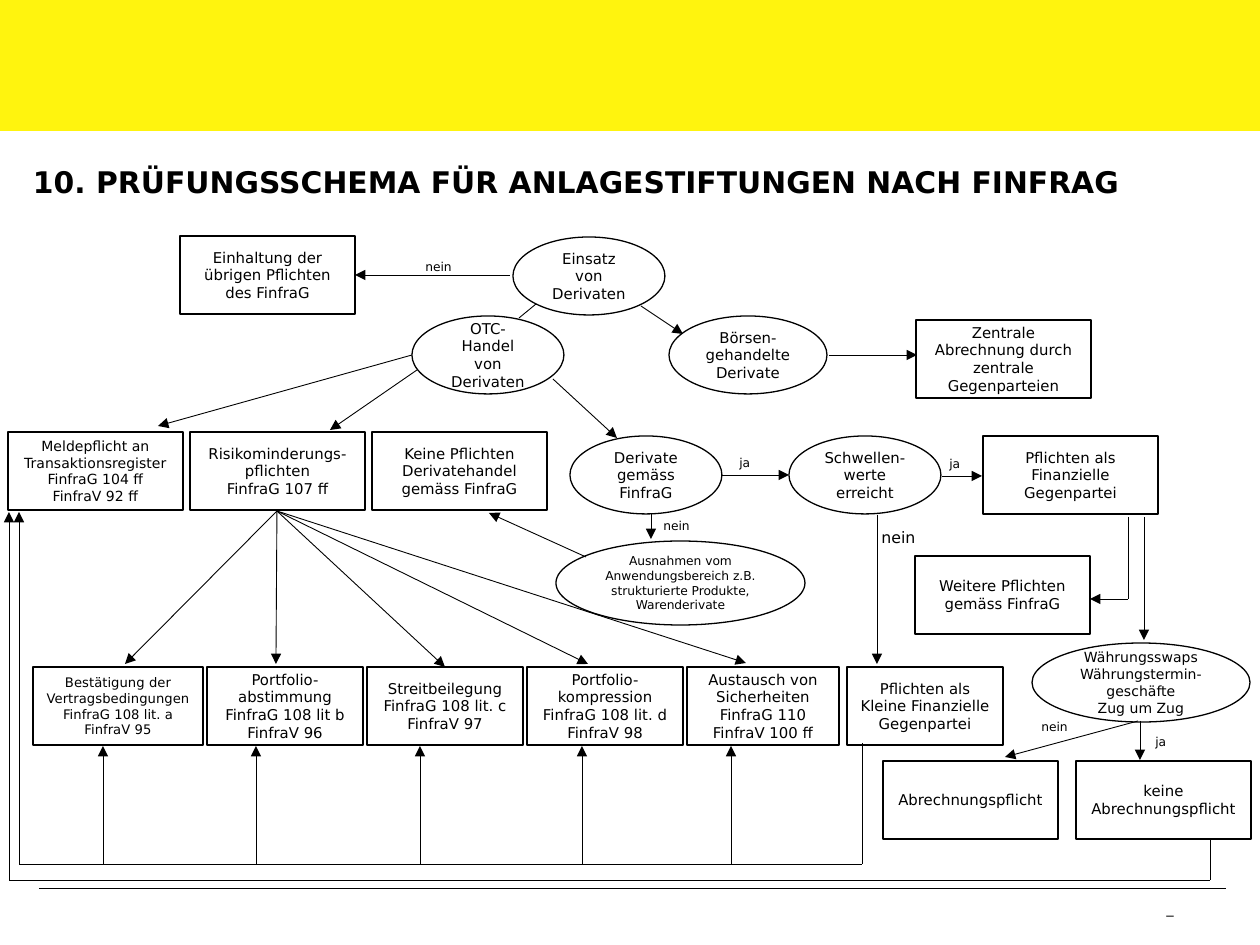
from lxml.etree import SubElement
from pptx import Presentation
from pptx.dml.color import RGBColor
from pptx.enum.shapes import MSO_CONNECTOR as CONN, MSO_SHAPE as SHAPE
from pptx.enum.text import MSO_ANCHOR as ANCHOR, PP_ALIGN as ALIGN
from pptx.oxml.ns import qn
from pptx.util import Emu, Pt

YELLOW = RGBColor(0xFF, 0xF4, 0x0E)
BLACK = RGBColor(0, 0, 0)
WHITE = RGBColor(0xFF, 0xFF, 0xFF)
FONT = "DejaVu Sans"
RECT, OVAL = SHAPE.RECTANGLE, SHAPE.OVAL
RECT_W, OVAL_W, NODE_H = 175, 152, 78


def px(n):
    """Turn slide pixels into EMU."""
    return Emu(round(n * 914400 / 126))


def write(tf, text, size, align=ALIGN.LEFT, bold=False):
    """Fill a text frame and format every run."""
    tf.text = text
    for p in tf.paragraphs:
        p.alignment = align
        for r in p.runs:
            r.font.name, r.font.size, r.font.bold = FONT, Pt(size), bold
            r.font.color.rgb = BLACK


def node(slide, box, kind, x, y, text, w=None, h=NODE_H, size=8.5):
    """Place an outlined node with centred text inside a region."""
    w = w or (RECT_W if kind == RECT else OVAL_W)
    sp = slide.shapes.add_shape(kind, px(box[0] + x), px(box[1] + y), px(w), px(h))
    sp.shadow.inherit = False
    sp.fill.solid()
    sp.fill.fore_color.rgb = WHITE
    sp.line.color.rgb = BLACK
    sp.line.width = Pt(0.75)
    sp.text_frame.word_wrap = True
    sp.text_frame.vertical_anchor = ANCHOR.MIDDLE
    write(sp.text_frame, text, size, ALIGN.CENTER)


def line(slide, box, x1, y1, x2, y2, arrow=True):
    """Draw a thin line, with an arrowhead at its end if wanted."""
    x, y = box[:2]
    cx = slide.shapes.add_connector(CONN.STRAIGHT, px(x + x1), px(y + y1), px(x + x2), px(y + y2))
    cx.line.color.rgb = BLACK
    cx.line.width = Pt(0.5)
    if arrow:
        SubElement(cx.line._get_or_add_ln(), qn("a:tailEnd"), type="triangle")
    SubElement(cx._element.spPr, qn("a:effectLst"))


def label(slide, box, x, y, text, w=64, h=28, size=7):
    """Place an answer label beside an arrow."""
    sp = slide.shapes.add_textbox(px(box[0] + x), px(box[1] + y), px(w), px(h))
    sp.text_frame.word_wrap = True
    write(sp.text_frame, text, size)


def plain_text(slide, x, y, w, h, text, size, align=ALIGN.LEFT, bold=False):
    """Place text without insets, centred vertically."""
    tf = slide.shapes.add_textbox(px(x), px(y), px(w), px(h)).text_frame
    tf.margin_left = tf.margin_right = tf.margin_top = tf.margin_bottom = 0
    tf.word_wrap = True
    tf.vertical_anchor = ANCHOR.MIDDLE
    write(tf, text, size, align, bold)


def add_frame(slide, box):
    """Add the banner, the title and the footer."""
    x, y, w, h = box
    sp = slide.shapes.add_shape(RECT, px(x), px(y), px(w), px(131))
    sp.shadow.inherit = False
    sp.fill.solid()
    sp.fill.fore_color.rgb = YELLOW
    sp.line.fill.background()
    plain_text(slide, x + 33, y + 139, 1154, 86,
               "10. PRÜFUNGSSCHEMA FÜR ANLAGESTIFTUNGEN NACH FINFRAG", 17, bold=True)
    line(slide, box, 39, h - 57, w - 34, h - 57, arrow=False)
    plain_text(slide, x + w - 98, y + h - 38, 16, 16, "‒", 8, ALIGN.CENTER)


def add_usage(slide, box):
    """Add the question of derivative use and its kinds of trading."""
    node(slide, box, OVAL, 333, 1, "Einsatz von Derivaten")
    node(slide, box, RECT, 0, 0, "Einhaltung der übrigen Pflichten des FinfraG")
    node(slide, box, OVAL, 232, 80, "OTC-Handel von Derivaten")
    node(slide, box, OVAL, 489, 80, "Börsen-gehandelte Derivate", w=158)
    node(slide, box, RECT, 736, 84, "Zentrale Abrechnung durch zentrale Gegenparteien")
    line(slide, box, 330, 39, 175, 39)
    line(slide, box, 649, 119, 737, 119)
    line(slide, box, 461, 70, 503, 98)
    line(slide, box, 356, 68, 339, 82, arrow=False)
    label(slide, box, 233, 17, "nein")


def add_otc(slide, box):
    """Add the duties and tests that follow from OTC trading."""
    node(slide, box, RECT, 0, 77,
         "Meldepflicht an Transaktionsregister\nFinfraG 104 ff\nFinfraV 92 ff", size=8)
    node(slide, box, RECT, 182, 77, "Risikominderungs-pflichten\nFinfraG 107 ff")
    node(slide, box, RECT, 364, 77, "Keine Pflichten Derivatehandel gemäss FinfraG")
    node(slide, box, OVAL, 562, 81, "Derivate gemäss FinfraG")
    node(slide, box, OVAL, 781, 81, "Schwellen-werte erreicht")
    node(slide, box, RECT, 975, 81, "Pflichten als Finanzielle Gegenpartei")
    node(slide, box, OVAL, 548, 186,
         "Ausnahmen vom Anwendungsbereich z.B. strukturierte Produkte, Warenderivate",
         w=249, h=84, size=7)
    for ends in ((404, 0, 150, 71), (409, 15, 322, 75), (545, 24, 609, 83),
                 (714, 120, 781, 120), (934, 121, 974, 121),
                 (643, 159, 643, 184), (578, 202, 481, 158)):
        line(slide, box, *ends)
    label(slide, box, 719, 94, "ja")
    label(slide, box, 929, 95, "ja")
    label(slide, box, 643, 157, "nein")


def add_duties(slide, box):
    """Add the row of risk duties with the arrows leading to it."""
    duties = (
        (25, 170, 7.5, "Bestätigung der Vertragsbedingungen\nFinfraG 108 lit. a\nFinfraV 95"),
        (199, 156, 8.5, "Portfolio-abstimmung\nFinfraG 108 lit b\nFinfraV 96"),
        (359, 156, 8.5, "Streitbeilegung\nFinfraG 108 lit. c\nFinfraV 97"),
        (519, 156, 8.5, "Portfolio-kompression\nFinfraG 108 lit. d\nFinfraV 98"),
        (679, 152, 8.5, "Austausch von Sicherheiten\nFinfraG 110\nFinfraV 100 ff"),
        (839, 156, 8.5, "Pflichten als Kleine Finanzielle Gegenpartei"),
    )
    for x, w, size, text in duties:
        node(slide, box, RECT, x, 156, text, w=w, size=size)
    for x, y in ((117, 153), (268, 153), (437, 156), (580, 153), (738, 152)):
        line(slide, box, 269, 0, x, y)
    line(slide, box, 869, 4, 869, 153)
    label(slide, box, 861, 11, "nein", w=87, h=32, size=9)


def add_counterparty(slide, box):
    """Add the duties of a financial counterparty."""
    node(slide, box, RECT, 32, 41, "Weitere Pflichten gemäss FinfraG")
    node(slide, box, RECT, 0, 246, "Abrechnungspflicht")
    node(slide, box, RECT, 193, 246, "keine Abrechnungspflicht")
    node(slide, box, OVAL, 149, 128,
         "Währungsswaps Währungstermin-geschäfte\nZug um Zug", w=218, h=79, size=8)
    line(slide, box, 245, 2, 245, 84, arrow=False)
    line(slide, box, 245, 84, 207, 84)
    line(slide, box, 261, 2, 261, 125)
    line(slide, box, 255, 206, 122, 242)
    line(slide, box, 257, 206, 257, 245)
    label(slide, box, 260, 213, "ja")
    label(slide, box, 146, 198, "nein", w=73)


def add_feedback(slide, box):
    """Add the two rails that lead back to the duties."""
    w, h = box[2:]
    rails = ((853, 231, 10, h - 16), (w - 1, 327, 0, h))
    for right, start, left, base in rails:
        line(slide, box, right, start, right, base, arrow=False)
        line(slide, box, right, base, left, base, arrow=False)
        line(slide, box, left, base, left, 0)
    for x in (94, 247, 411, 573, 722):
        line(slide, box, x, h - 16, x, 234)


def main():
    """Build the slide and save it."""
    prs = Presentation()
    prs.slide_width, prs.slide_height = px(1260), px(945)
    slide = prs.slides.add_slide(prs.slide_layouts[6])
    add_frame(slide, (0, 0, 1260, 945))
    add_usage(slide, (180, 236, 911, 162))
    add_otc(slide, (8, 355, 1150, 270))
    add_duties(slide, (8, 511, 995, 234))
    add_counterparty(slide, (883, 515, 368, 324))
    add_feedback(slide, (9, 512, 1202, 368))
    prs.save("out.pptx")


if __name__ == "__main__":
    main()
